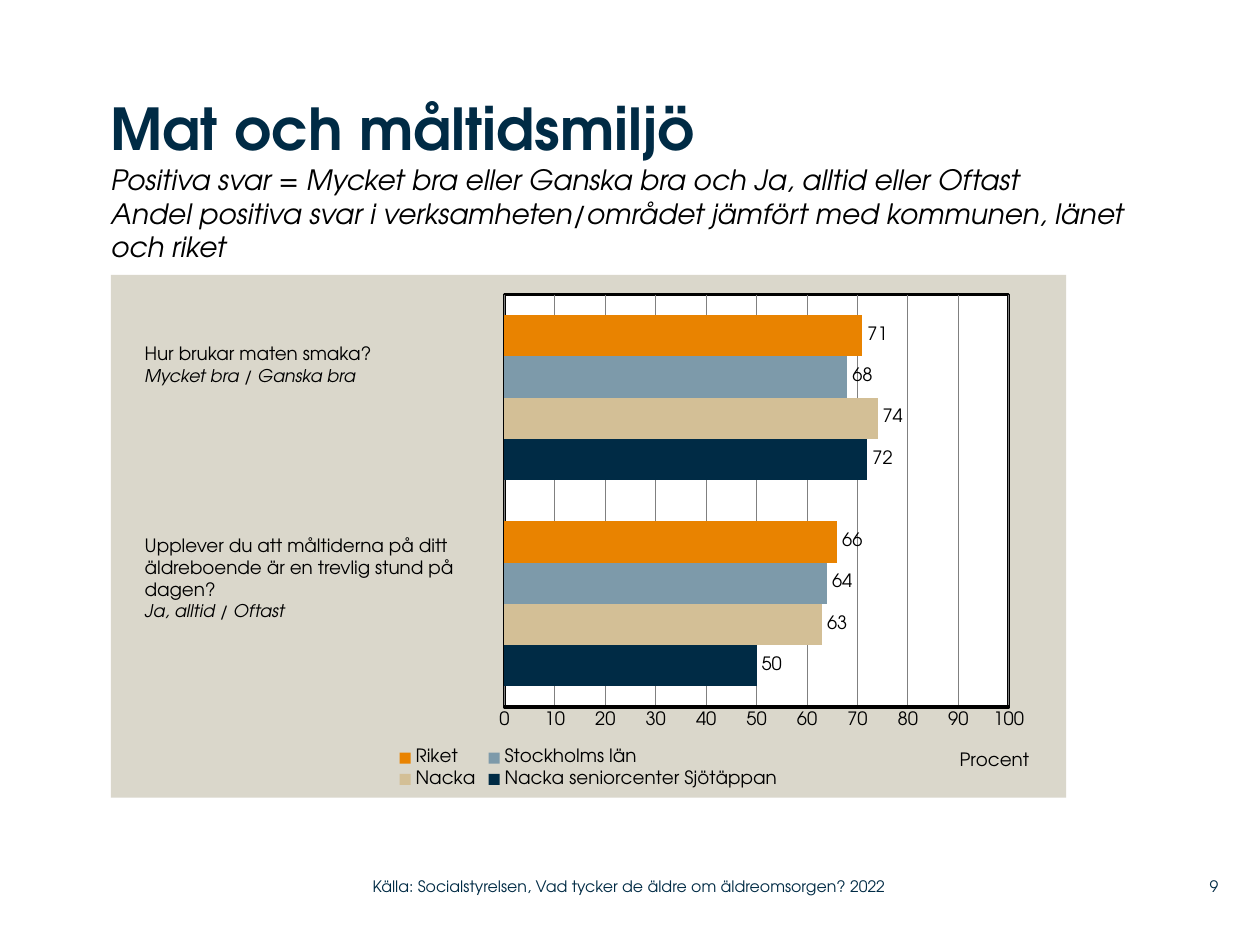
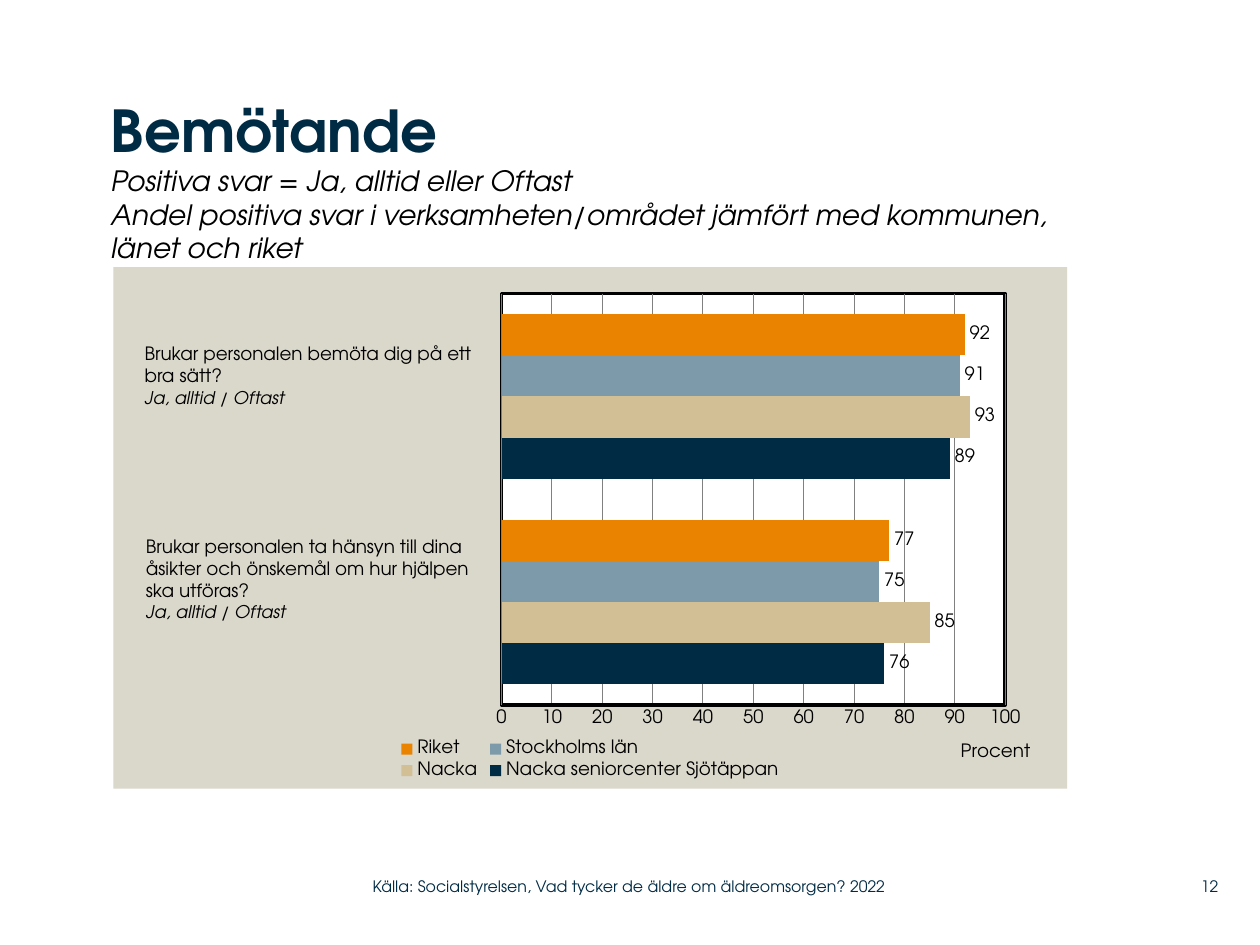
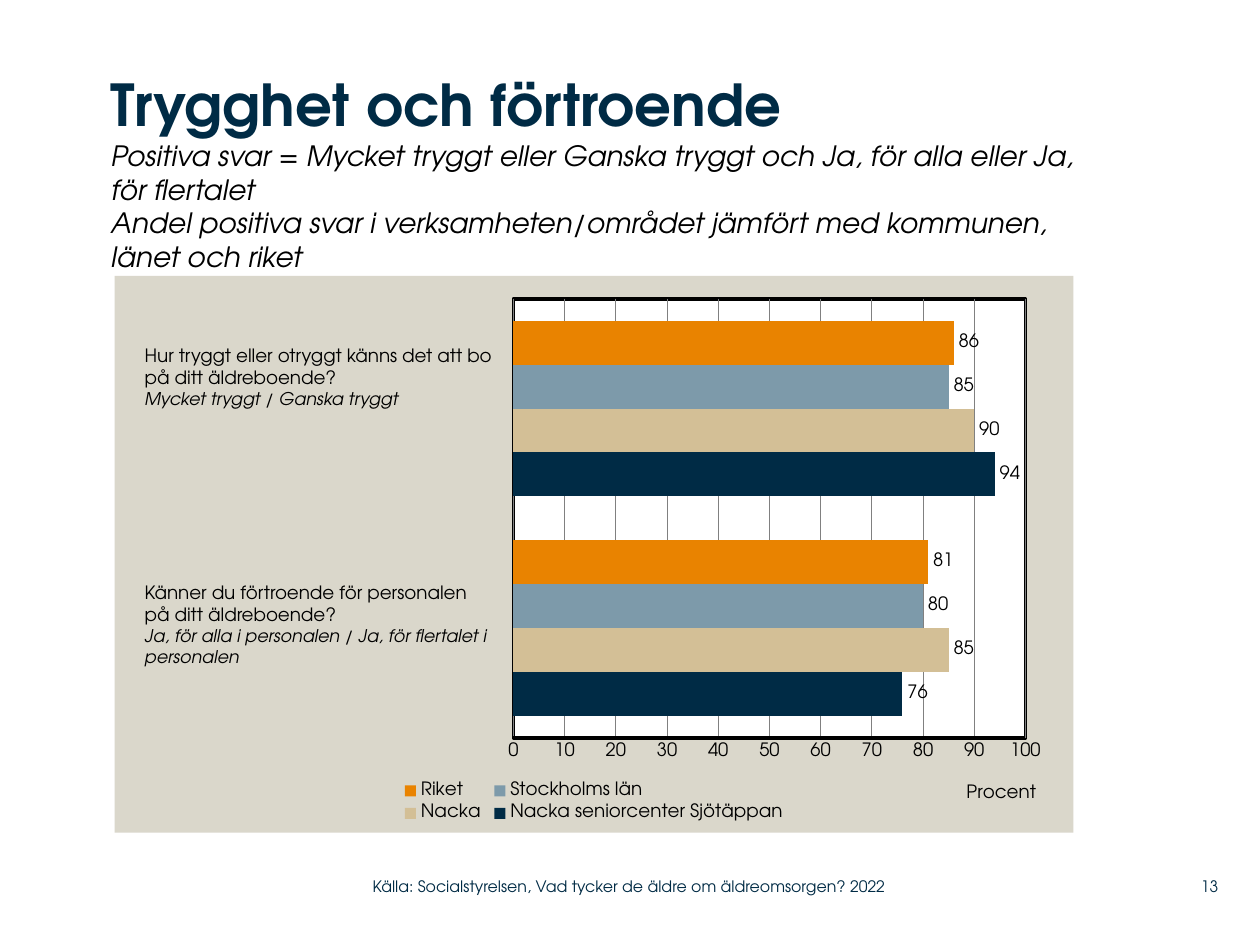
from lxml.etree import fromstring
from pptx import Presentation
from pptx.chart.data import CategoryChartData
from pptx.dml.color import RGBColor
from pptx.enum.chart import (XL_CHART_TYPE, XL_LABEL_POSITION,
                             XL_LEGEND_POSITION, XL_TICK_MARK)
from pptx.enum.text import MSO_ANCHOR, PP_ALIGN
from pptx.oxml.ns import nsdecls, qn
from pptx.util import Pt

FONT = "TeX Gyre Adventor"
COLORS = {"navy": "002B45", "sand": "D3BF96", "steel": "7D9AAA",
          "orange": "E98300", "panel": "DAD7CB", "grid": "808080",
          "white": "FFFFFF", "black": "000000"}
# Series from the bottom bar to the top bar
SERIES = [("Nacka seniorcenter Sjötäppan", "navy"), ("Nacka", "sand"),
          ("Stockholms län", "steel"), ("Riket", "orange")]
SHARE = ("Andel positiva svar i verksamheten/området jämfört med "
         "kommunen, länet och riket")
SOURCE = "Källa: Socialstyrelsen, Vad tycker de äldre om äldreomsorgen? 2022"

# Boxes are left, top, width, height in points
PAGES = [
    {"title": "Mat och måltidsmiljö", "page": "9",
     "scale": "Positiva svar = Mycket bra eller Ganska bra och Ja, alltid "
              "eller Oftast",
     "head": (63.4, 53.3, 606.2, 103.7),
     "chart": (63.4, 157, 545.8, 298.8),
     "plot": (0.412, 0.038, 0.528, 0.789),
     "values": [(50, 72), (63, 74), (64, 68), (66, 71)],
     "asks": [
         ((75.6, 192.2, 199.4, 45.4),
          ["Hur brukar maten smaka?"], "Mycket bra / Ganska bra"),
         ((75.6, 301.7, 199.4, 70.6),
          ["Upplever du att måltiderna på ditt äldreboende är en trevlig "
           "stund på", "dagen?"], "Ja, alltid / Oftast")]},
    {"title": "Bemötande", "page": "12",
     "scale": "Positiva svar = Ja, alltid eller Oftast",
     "head": (63.4, 54, 578.9, 86.4),
     "chart": (64.8, 152.6, 545, 298.1),
     "plot": (0.407, 0.051, 0.528, 0.789),
     "values": [(76, 89), (85, 93), (75, 91), (77, 92)],
     "asks": [
         ((75.6, 192.2, 213.8, 58.3),
          ["Brukar personalen bemöta dig på ett", "bra sätt?"],
          "Ja, alltid / Oftast"),
         ((76.3, 302.4, 216.7, 70.6),
          ["Brukar personalen ta hänsyn till dina",
           "åsikter och önskemål om hur hjälpen", "ska utföras?"],
          "Ja, alltid / Oftast")]},
    {"title": "Trygghet och förtroende", "page": "13",
     "scale": "Positiva svar = Mycket tryggt eller Ganska tryggt och Ja, "
              "för alla eller Ja, för flertalet",
     "head": (63.4, 39.6, 558, 118.1),
     "chart": (65.5, 157.7, 547.9, 318.2),
     "plot": (0.416, 0.041, 0.534, 0.789),
     "values": [(76, 94), (85, 90), (80, 85), (81, 86)],
     "asks": [
         ((75.6, 193, 214.6, 58.3),
          ["Hur tryggt eller otryggt känns det att bo på ditt "
           "äldreboende?"], "Mycket tryggt / Ganska tryggt"),
         ((75.6, 328.3, 216, 70.6),
          ["Känner du förtroende för personalen", "på ditt äldreboende?"],
          "Ja, för alla i personalen / Ja, för flertalet i personalen")]},
]


def color(name):
    return RGBColor.from_string(COLORS[name])


def place(parent, index, spots, inner=False):
    """Give a chart part a fixed place, as shares of the chart."""
    for old in parent.findall(qn("c:layout")):
        parent.remove(old)
    target = '<c:layoutTarget val="inner"/>' if inner else ""
    modes = '<c:xMode val="edge"/><c:yMode val="edge"/>'
    sizes = "".join(f'<c:{key} val="{val}"/>' for key, val in zip("xywh", spots))
    parent.insert(index, fromstring(
        f'<c:layout {nsdecls("c")}><c:manualLayout>{target}{modes}{sizes}'
        '</c:manualLayout></c:layout>'))


def area(fill, line=None):
    """Fill and outline for a chart or plot area."""
    paint = '<a:solidFill><a:srgbClr val="{}"/></a:solidFill>'
    edge = paint.format(COLORS[line]) if line else "<a:noFill/>"
    return fromstring(
        f'<c:spPr {nsdecls("c", "a")}>{paint.format(COLORS[fill])}'
        f'<a:ln w="{Pt(2)}">{edge}</a:ln></c:spPr>')


class Deck:
    def __init__(self):
        self.prs = Presentation()
        self.prs.slide_width, self.prs.slide_height = Pt(720), Pt(540)
        self.slide = None

    def page(self):
        self.slide = self.prs.slides.add_slide(self.prs.slide_layouts[6])

    def style(self, font, size, tint="black", bold=False, italic=False):
        font.name, font.size = FONT, Pt(size)
        font.bold, font.italic = bold, italic
        font.color.rgb = color(tint)

    def run(self, para, text, size, tint="black", **kind):
        run = para.add_run()
        run.text = text
        self.style(run.font, size, tint, **kind)

    def box(self, spot, inset=True):
        shape = self.slide.shapes.add_textbox(*map(Pt, spot))
        frame = shape.text_frame
        frame.word_wrap = True
        if not inset:
            frame.margin_left = frame.margin_right = 0
            frame.margin_top = frame.margin_bottom = 0
        return frame

    def title(self, spot, text, notes):
        para = self.box(spot, False).paragraphs[0]
        self.run(para, text, 33, "navy", bold=True)
        for note in notes:
            para.add_line_break()
            self.run(para, note, 16, italic=True)

    def ask(self, spot, lines, answer):
        frame = self.box(spot)
        for i, line in enumerate(lines):
            para = frame.add_paragraph() if i else frame.paragraphs[0]
            self.run(para, line, 10.5)
        self.run(frame.add_paragraph(), answer, 10, italic=True)

    def foot(self, left, width, text, align=PP_ALIGN.LEFT):
        frame = self.box((left, 496, width, 21), False)
        frame.vertical_anchor = MSO_ANCHOR.MIDDLE
        para = frame.paragraphs[0]
        para.alignment = align
        self.run(para, text, 9, "navy")

    def chart(self, spot, inner, values):
        data = CategoryChartData()
        data.categories = ["1", "2"]
        for (name, _), vals in zip(SERIES, values):
            data.add_series(name, vals)
        chart = self.slide.shapes.add_chart(
            XL_CHART_TYPE.BAR_CLUSTERED, *map(Pt, spot), data).chart
        chart.has_title = False
        self.style(chart.font, 10.5)

        # Bars and value labels
        plot = chart.plots[0]
        plot.gap_width, plot.overlap = 100, 0
        plot.vary_by_categories = False
        for bar, (_, tint) in zip(plot.series, SERIES):
            bar.format.fill.solid()
            bar.format.fill.fore_color.rgb = color(tint)
        plot.has_data_labels = True
        labels = plot.data_labels
        labels.show_value = True
        labels.position = XL_LABEL_POSITION.OUTSIDE_END
        self.style(labels.font, 10.5)

        # Axes
        chart.category_axis.visible = False
        axis = chart.value_axis
        axis.minimum_scale, axis.maximum_scale = 0, 100
        axis.major_unit = 10
        axis.major_tick_mark = axis.minor_tick_mark = XL_TICK_MARK.NONE
        axis.format.line.color.rgb = color("black")
        axis.format.line.width = Pt(2)
        grid = axis.major_gridlines.format.line
        grid.color.rgb, grid.width = color("grid"), Pt(0.5)
        self.style(axis.tick_labels.font, 10.5)
        para = axis.axis_title.text_frame.paragraphs[0]
        self.run(para, "Procent", 10.5)
        place(axis.axis_title.format.line and
              axis.axis_title.text_frame and
              chart.element.find(".//" + qn("c:valAx") + "/" + qn("c:title")),
              1, (0.885, 0.905))

        # Legend
        chart.has_legend = True
        legend = chart.legend
        legend.position = XL_LEGEND_POSITION.BOTTOM
        legend.include_in_layout = False
        self.style(legend.font, 10.5)
        place(chart.element.find(".//" + qn("c:legend")), 1,
              (0.295, 0.9, 0.41, 0.09))

        # Panel and plot backgrounds
        body = chart.element.find(qn("c:chart"))
        body.addnext(area("panel"))
        field = body.find(qn("c:plotArea"))
        place(field, 0, inner, True)
        field.append(area("white", "black"))


def main():
    deck = Deck()
    for page in PAGES:
        deck.page()
        deck.title(page["head"], page["title"], [page["scale"], SHARE])
        deck.chart(page["chart"], page["plot"], page["values"])
        for ask in page["asks"]:
            deck.ask(*ask)
        deck.foot(213, 319, SOURCE)
        deck.foot(662.4, 33.8, page["page"], PP_ALIGN.RIGHT)
    deck.prs.save("out.pptx")


if __name__ == "__main__":
    main()
